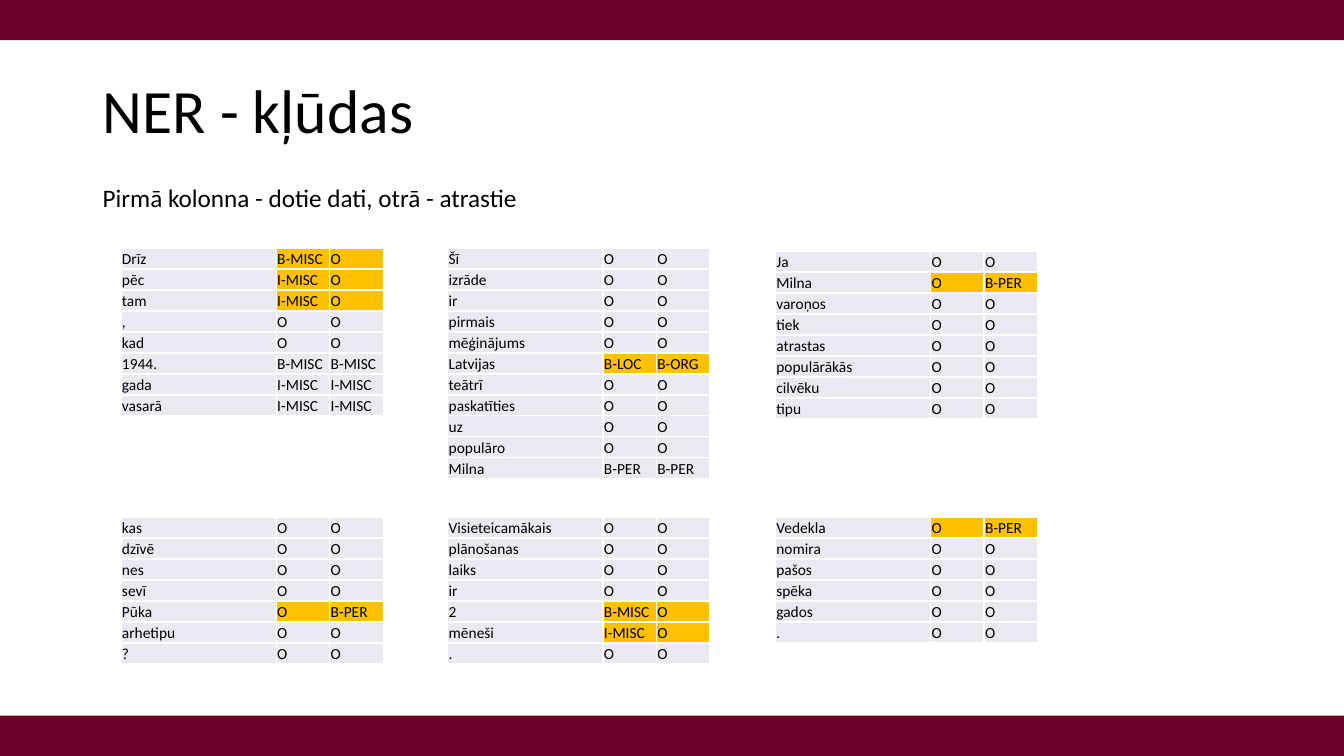
from pptx import Presentation
from pptx import util as u
from pptx.dml.color import RGBColor
from pptx.enum import shapes, text

COLORS = {"band": "6D0029", "ink": "000000", "cell": "E9EAF1", "error": "FFC000"}
FONT = "Calibri"
WIDTH, HEIGHT, BAND = 13.33, 7.5, 0.4
COLUMN_WIDTHS = (1.54, 0.53, 0.53)
ROW_HEIGHT = 1.25 / 6
LEFTS = (1.2, 4.44, 7.69)

# Each line is a token with its given and found tags; a lone token is tagged O in both.
UPPER = [
    (2.46, ["Drīz B-MISC O", "pēc I-MISC O", "tam I-MISC O", ",", "kad",
            "1944. B-MISC B-MISC", "gada I-MISC I-MISC", "vasarā I-MISC I-MISC"]),
    (2.46, ["Šī", "izrāde", "ir", "pirmais", "mēģinājums", "Latvijas B-LOC B-ORG",
            "teātrī", "paskatīties", "uz", "populāro", "Milna B-PER B-PER"]),
    (2.49, ["Ja", "Milna O B-PER", "varoņos", "tiek", "atrastas", "populārākās",
            "cilvēku", "tipu"]),
]
LOWER = [
    (5.13, ["kas", "dzīvē", "nes", "sevī", "Pūka O B-PER", "arhetipu", "?"]),
    (5.13, ["Visieteicamākais", "plānošanas", "laiks", "ir", "2 B-MISC O",
            "mēneši I-MISC O", "."]),
    (5.13, ["Vedekla O B-PER", "nomira", "pašos", "spēka", "gados", "."]),
]


class NerSlide:
    def __init__(self, deck):
        self.slide = deck.slides.add_slide(deck.slide_layouts[5])

    def color(self, name):
        return RGBColor.from_string(COLORS[name])

    def set_words(self, frame, words, size):
        frame.text = words
        paragraph = frame.paragraphs[0]
        paragraph.alignment = text.PP_ALIGN.LEFT
        font = paragraph.runs[0].font
        font.name, font.size = FONT, u.Pt(size)
        font.color.rgb = self.color("ink")

    def band(self, top):
        band = self.slide.shapes.add_shape(
            shapes.MSO_SHAPE.RECTANGLE, 0, u.Inches(top), u.Inches(WIDTH), u.Inches(BAND))
        band.shadow.inherit = False
        band.fill.solid()
        band.fill.fore_color.rgb = self.color("band")
        band.line.fill.background()

    def title(self, words):
        title = self.slide.shapes.title
        title.left, title.top = u.Inches(0.92), u.Inches(0.4)
        title.width, title.height = u.Inches(11.5), u.Inches(1.45)
        frame = title.text_frame
        frame.vertical_anchor = text.MSO_ANCHOR.MIDDLE
        self.set_words(frame, words, 44)
        frame.paragraphs[0].line_spacing = 0.9

    def caption(self, words):
        caption = self.slide.shapes.add_textbox(
            u.Inches(0.92), u.Inches(1.76), u.Inches(4.36), u.Inches(0.4))
        frame = caption.text_frame
        frame.word_wrap = False
        frame.auto_size = text.MSO_AUTO_SIZE.SHAPE_TO_FIT_TEXT
        self.set_words(frame, words, 18)

    def tag_table(self, left, top, lines):
        """Draw one sentence fragment, marking the tags that disagree."""
        table = self.slide.shapes.add_table(
            len(lines), len(COLUMN_WIDTHS), u.Inches(left), u.Inches(top),
            u.Inches(sum(COLUMN_WIDTHS)), u.Inches(ROW_HEIGHT * len(lines))).table
        table.first_row = table.horz_banding = False
        for column, width in zip(table.columns, COLUMN_WIDTHS):
            column.width = u.Inches(width)
        for row, line in zip(table.rows, lines):
            row.height = u.Inches(ROW_HEIGHT)
            token, given, found = line.split() if " " in line else (line, "O", "O")
            tag_fill = "cell" if given == found else "error"
            self.cell(row.cells[0], token, "cell")
            self.cell(row.cells[1], given, tag_fill)
            self.cell(row.cells[2], found, tag_fill)

    def cell(self, cell, words, fill):
        cell.margin_left = cell.margin_top = cell.margin_right = u.Inches(0.01)
        cell.margin_bottom = 0
        cell.vertical_anchor = text.MSO_ANCHOR.BOTTOM
        cell.fill.solid()
        cell.fill.fore_color.rgb = self.color(fill)
        self.set_words(cell.text_frame, words, 11)


def main():
    deck = Presentation()
    deck.slide_width, deck.slide_height = u.Inches(WIDTH), u.Inches(HEIGHT)
    errors = NerSlide(deck)
    for top in (0, HEIGHT - BAND):
        errors.band(top)
    errors.title("NER - kļūdas")
    for fragments in (UPPER, LOWER):
        for left, (top, lines) in zip(LEFTS, fragments):
            errors.tag_table(left, top, lines)
    errors.caption("Pirmā kolonna - dotie dati, otrā - atrastie")
    deck.save("out.pptx")


if __name__ == "__main__":
    main()
